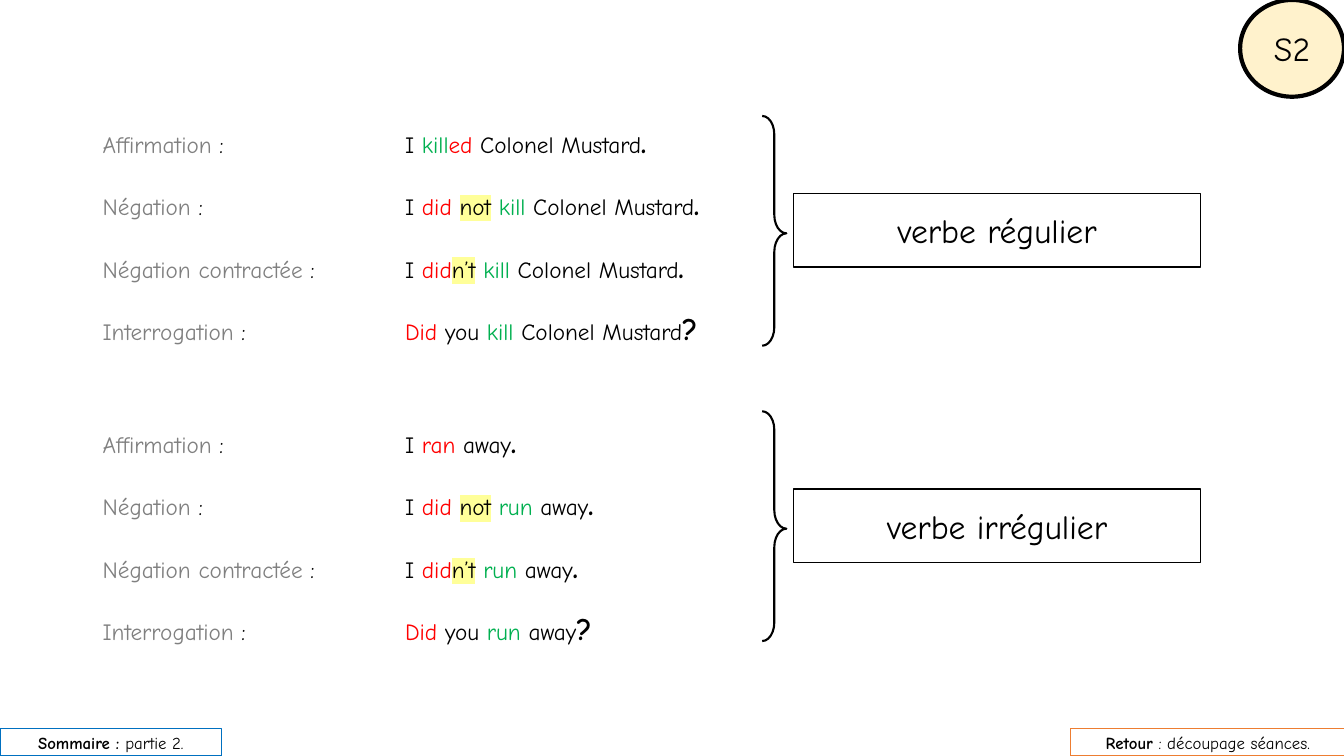
from dataclasses import dataclass

import pptx
import pptx.dml.color
import pptx.enum.shapes
import pptx.enum.text
import pptx.oxml.ns
import pptx.util
from lxml import etree

Inches = pptx.util.Inches
Pt = pptx.util.Pt
Shapes = pptx.enum.shapes.MSO_SHAPE


@dataclass(frozen=True)
class Theme:
    font: str = "Comic Neue"
    text: str = "000000"
    label: str = "808080"
    verb: str = "00B050"
    past: str = "FF0000"
    highlight: str = "FFFF99"
    white: str = "FFFFFF"
    badge: str = "FFF2CC"
    summary: str = "0070C0"
    back: str = "ED7D31"
    body_size: float = 16.6
    mark_size: float = 22.2
    title_size: float = 24
    link_size: float = 12


theme = Theme()
qn = pptx.oxml.ns.qn
rgb = pptx.dml.color.RGBColor.from_string


def add_run(paragraph, text, size, color=theme.text, bold=False, highlight=None):
    run = paragraph.add_run()
    run.text = text
    run.font.size = Pt(size)
    run.font.bold = bold
    run.font.color.rgb = rgb(color)
    if highlight:
        mark = etree.Element(qn("a:highlight"))
        etree.SubElement(mark, qn("a:srgbClr"), val=highlight)
        run.font.fill._xPr.find(qn("a:solidFill")).addnext(mark)
    run.font.name = theme.font


def add_panel(kind, left, top, width, height, line, line_width, fill=None, runs=(), size=theme.title_size):
    """Add an outlined shape; runs is a list of (text, bold) pairs."""
    shape = slide.shapes.add_shape(kind, Inches(left), Inches(top), Inches(width), Inches(height))
    shape.shadow.inherit = False
    shape.line.color.rgb = rgb(line)
    shape.line.width = Pt(line_width)
    if fill:
        shape.fill.solid()
        shape.fill.fore_color.rgb = rgb(fill)
    else:
        shape.fill.background()
    shape.text_frame.word_wrap = True
    shape.text_frame.vertical_anchor = pptx.enum.text.MSO_ANCHOR.MIDDLE
    paragraph = shape.text_frame.paragraphs[0]
    paragraph.alignment = pptx.enum.text.PP_ALIGN.CENTER
    for text, bold in runs:
        add_run(paragraph, text, size, bold=bold)
    return shape


presentation = pptx.Presentation()
presentation.slide_width = Inches(13.33)
presentation.slide_height = Inches(7.5)
slide = presentation.slides.add_slide(presentation.slide_layouts[6])

# Conjugation lines: label, tab, sentence
verbs = [
    ("kill", [("kill", theme.verb), ("ed", theme.past)], " Colonel Mustard"),
    ("run", [("ran", theme.past)], " away"),
]
body = slide.shapes.add_textbox(Inches(0.92), Inches(1.05), Inches(11.5), Inches(5.41))
body.text_frame.word_wrap = True
paragraph = body.text_frame.paragraphs[0]
first_line = True
for base, past_forms, complement in verbs:
    subject = ("I ", theme.text)
    verb = (base, theme.verb)
    space = (" ", theme.text)
    forms = [
        ("Affirmation", [subject, *past_forms], "."),
        ("Négation", [subject, ("did ", theme.past), ("not", None), space, verb], "."),
        ("Négation contractée", [subject, ("did", theme.past), ("n’t", None), space, verb], "."),
        ("Interrogation", [("Did ", theme.past), ("you ", theme.text), verb], "?"),
    ]
    for index, (label, parts, mark) in enumerate(forms):
        if not first_line:
            paragraph = body.text_frame.add_paragraph()
        paragraph.line_spacing = 1.3
        paragraph.space_before = Pt(46 if index == 0 and not first_line else 10)
        first_line = False
        tabs = etree.SubElement(paragraph._p.get_or_add_pPr(), qn("a:tabLst"))
        etree.SubElement(tabs, qn("a:tab"), pos=str(Inches(3)), algn="l")
        add_run(paragraph, label, theme.body_size, theme.label)
        add_run(paragraph, " :\t", theme.body_size)
        for text, color in parts:
            highlight = None if color else theme.highlight
            add_run(paragraph, text, theme.body_size, color or theme.text, highlight=highlight)
        add_run(paragraph, complement, theme.body_size)
        add_run(paragraph, mark, theme.mark_size, bold=True)

# Braces with the verb type of each group
for top, verb_type in [(1.15, "verbe régulier"), (4.08, "verbe irrégulier")]:
    brace = add_panel(Shapes.RIGHT_BRACE, 7.56, top, 0.24, 2.28, theme.text, 1.5)
    brace.adjustments[0] = 0.765
    brace.adjustments[1] = 0.511
    add_panel(Shapes.RECTANGLE, 7.87, top + 0.77, 4.04, 0.73, theme.text, 1, theme.white, [(verb_type, False)])

# Session badge and navigation boxes
add_panel(Shapes.OVAL, 12.3, 0, 1.03, 0.96, theme.text, 3, theme.badge, [("S2", False)])
add_panel(Shapes.RECTANGLE, 10.62, 7.23, 2.72, 0.27, theme.back, 1, theme.white,
          [("Retour", True), (" : découpage séances.", False)], theme.link_size)
add_panel(Shapes.RECTANGLE, 0, 7.23, 2.2, 0.27, theme.summary, 1, theme.white,
          [("Sommaire : ", True), ("partie 2.", False)], theme.link_size)

presentation.save("out.pptx")
